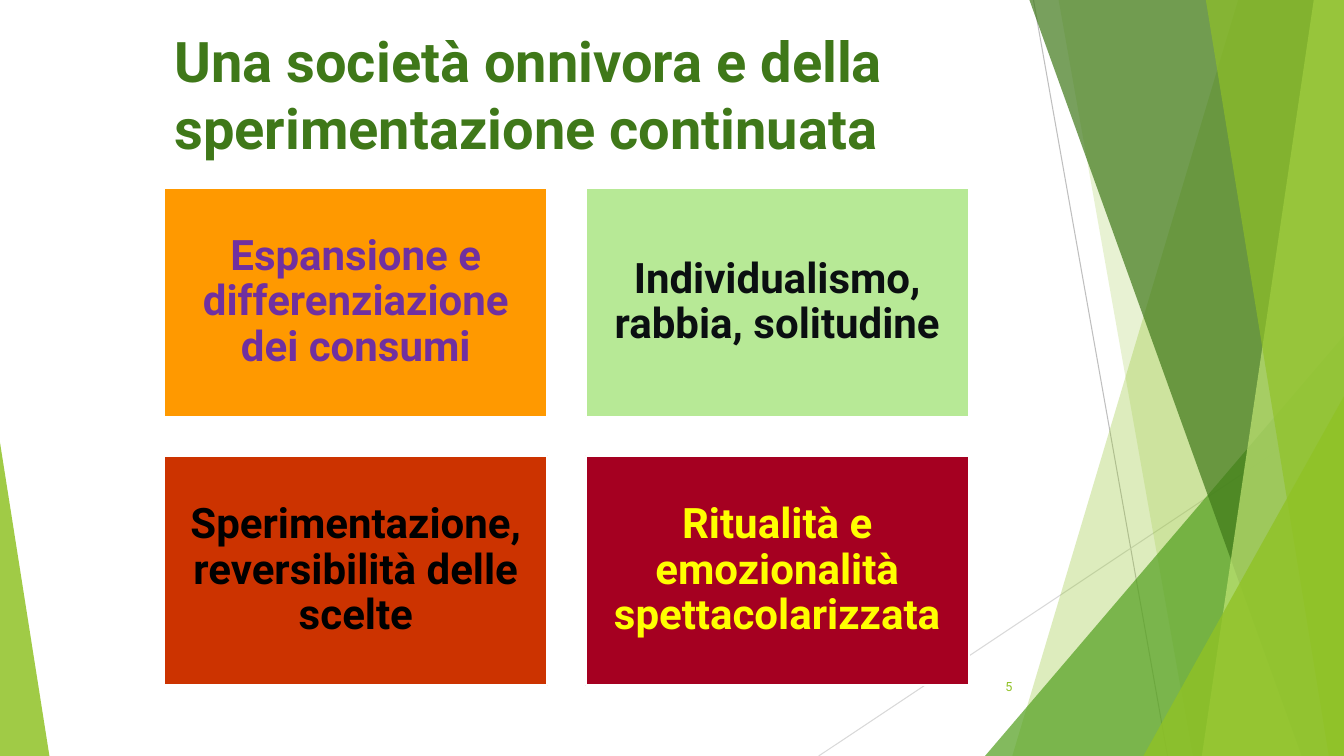
"""Build the slide on an omnivorous society of continual experimentation."""
from lxml import etree
from pptx import Presentation
from pptx.dml.color import RGBColor
from pptx.enum import shapes, text
from pptx.oxml import ns
from pptx.util import Pt

PX = 9144
WIDTH, HEIGHT = 1333, 750
FONT = "Roboto"

WHITE = RGBColor(0xFF, 0xFF, 0xFF)
BLACK = RGBColor(0x00, 0x00, 0x00)
INK = RGBColor(0x0B, 0x0F, 0x11)
GREY = RGBColor(0xBF, 0xBF, 0xBF)
PALE_GREY = RGBColor(0xD9, 0xD9, 0xD9)
LIME = RGBColor(0x90, 0xC2, 0x26)
PALE_LIME = RGBColor(0xC0, 0xE4, 0x74)
GREEN = RGBColor(0x54, 0xA0, 0x21)
DARK_GREEN = RGBColor(0x3F, 0x78, 0x19)
MINT = RGBColor(0xB7, 0xE9, 0x96)
ORANGE = RGBColor(0xFF, 0x99, 0x00)
RUST = RGBColor(0xCC, 0x33, 0x00)
CRIMSON = RGBColor(0xA5, 0x00, 0x21)
PURPLE = RGBColor(0x70, 0x30, 0xA0)
YELLOW = RGBColor(0xFF, 0xFF, 0x00)

TITLE = "Una società onnivora e della sperimentazione continuata"
TITLE_BOX = (163, 21, 852, 127)
NUMBER = "5"
NUMBER_BOX = (939, 661, 75, 40)

CARDS = [
    [("Espansione e differenziazione dei consumi", ORANGE, PURPLE),
     ("Individualismo, rabbia, solitudine", MINT, INK)],
    [("Sperimentazione, reversibilità delle scelte", RUST, BLACK),
     ("Ritualità e emozionalità spettacolarizzata", CRIMSON, YELLOW)],
]
CARD_LEFT, CARD_TOP = 163, 186
CARD_WIDTH, CARD_HEIGHT = 380, 228
CARD_GAP = 38

RAYS = [((1025, 0, 1158, HEIGHT), GREY), ((WIDTH, 403, 812, HEIGHT), PALE_GREY)]

# (kind, geometry, colour, opacity %): a band runs from its top x and bottom x to the right edge
FACETS = [
    ("band", (1228, 1004), LIME, 30),
    ("band", (1050, 1183), LIME, 20),
    ("triangle", (977, 333, 356, 1), GREEN, 72),
    ("band", (1021, 1291), DARK_GREEN, 70),
    ("band", (1303, 1192), PALE_LIME, 70),
    ("band", (1196, 1318), LIME, 65),
    ("triangle", (1134, 393, 199, 1), LIME, 80),
    ("triangle", (0, 439, 49, 0), LIME, 85),
]


def scaled(*lengths):
    return [length * PX for length in lengths]


def write(frame, words, size, colour, align, bold=False):
    para = frame.paragraphs[0]
    para.alignment = align
    span = para.add_run()
    span.text = words
    span.font.name, span.font.size, span.font.bold = FONT, Pt(size), bold
    span.font.color.rgb = colour
    return para


def add_ray(page, ends, colour):
    ray = page.shapes.add_connector(shapes.MSO_CONNECTOR.STRAIGHT, *scaled(*ends))
    ray.line.color.rgb = colour
    ray.line.width = Pt(0.75)
    etree.SubElement(ray.element.spPr, ns.qn("a:effectLst"))


def add_facet(page, kind, geometry, colour, opacity):
    if kind == "band":
        top_x, bottom_x = geometry
        outline = page.shapes.build_freeform(top_x, 0, scale=PX)
        outline.add_line_segments([(WIDTH, 0), (WIDTH, HEIGHT), (bottom_x, HEIGHT)])
        facet = outline.convert_to_shape()
    else:
        left, top, width, apex = geometry
        facet = page.shapes.add_shape(shapes.MSO_SHAPE.ISOSCELES_TRIANGLE,
                                      *scaled(left, top, width, HEIGHT - top))
        facet.adjustments[0] = apex
    facet.shadow.inherit = False
    facet.fill.solid()
    facet.fill.fore_color.rgb = colour
    facet.line.fill.background()
    tint = next(facet.element.spPr.iter(ns.qn("a:srgbClr")))
    etree.SubElement(tint, ns.qn("a:alpha"), val=str(opacity * 1000))


def add_card(page, row, column, words, fill, ink):
    left = CARD_LEFT + column * (CARD_WIDTH + CARD_GAP)
    top = CARD_TOP + row * (CARD_HEIGHT + CARD_GAP)
    card = page.shapes.add_shape(shapes.MSO_SHAPE.RECTANGLE,
                                 *scaled(left, top, CARD_WIDTH, CARD_HEIGHT))
    card.shadow.inherit = False
    card.fill.solid()
    card.fill.fore_color.rgb = fill
    card.line.color.rgb = WHITE
    card.line.width = Pt(1.5)
    frame = card.text_frame
    frame.word_wrap = True
    frame.vertical_anchor = text.MSO_ANCHOR.MIDDLE
    frame.margin_left = frame.margin_right = frame.margin_top = frame.margin_bottom = 12 * PX
    para = write(frame, words, 30, ink, text.PP_ALIGN.CENTER, bold=True)
    para.line_spacing = 0.9


def main():
    deck = Presentation()
    deck.slide_width, deck.slide_height = scaled(WIDTH, HEIGHT)
    page = deck.slides.add_slide(deck.slide_layouts[5])

    for ends, colour in RAYS:
        add_ray(page, ends, colour)
    for facet in FACETS:
        add_facet(page, *facet)

    title = page.shapes.title
    title.left, title.top, title.width, title.height = scaled(*TITLE_BOX)
    title.text_frame.auto_size = text.MSO_AUTO_SIZE.NONE
    title.text_frame.vertical_anchor = text.MSO_ANCHOR.TOP
    write(title.text_frame, TITLE, 40, DARK_GREEN, text.PP_ALIGN.LEFT, bold=True)

    for row, cards in enumerate(CARDS):
        for column, card in enumerate(cards):
            add_card(page, row, column, *card)

    number = page.shapes.add_textbox(*scaled(*NUMBER_BOX)).text_frame
    number.word_wrap = True
    number.vertical_anchor = text.MSO_ANCHOR.MIDDLE
    write(number, NUMBER, 9, LIME, text.PP_ALIGN.RIGHT)

    deck.save("out.pptx")


if __name__ == "__main__":
    main()
